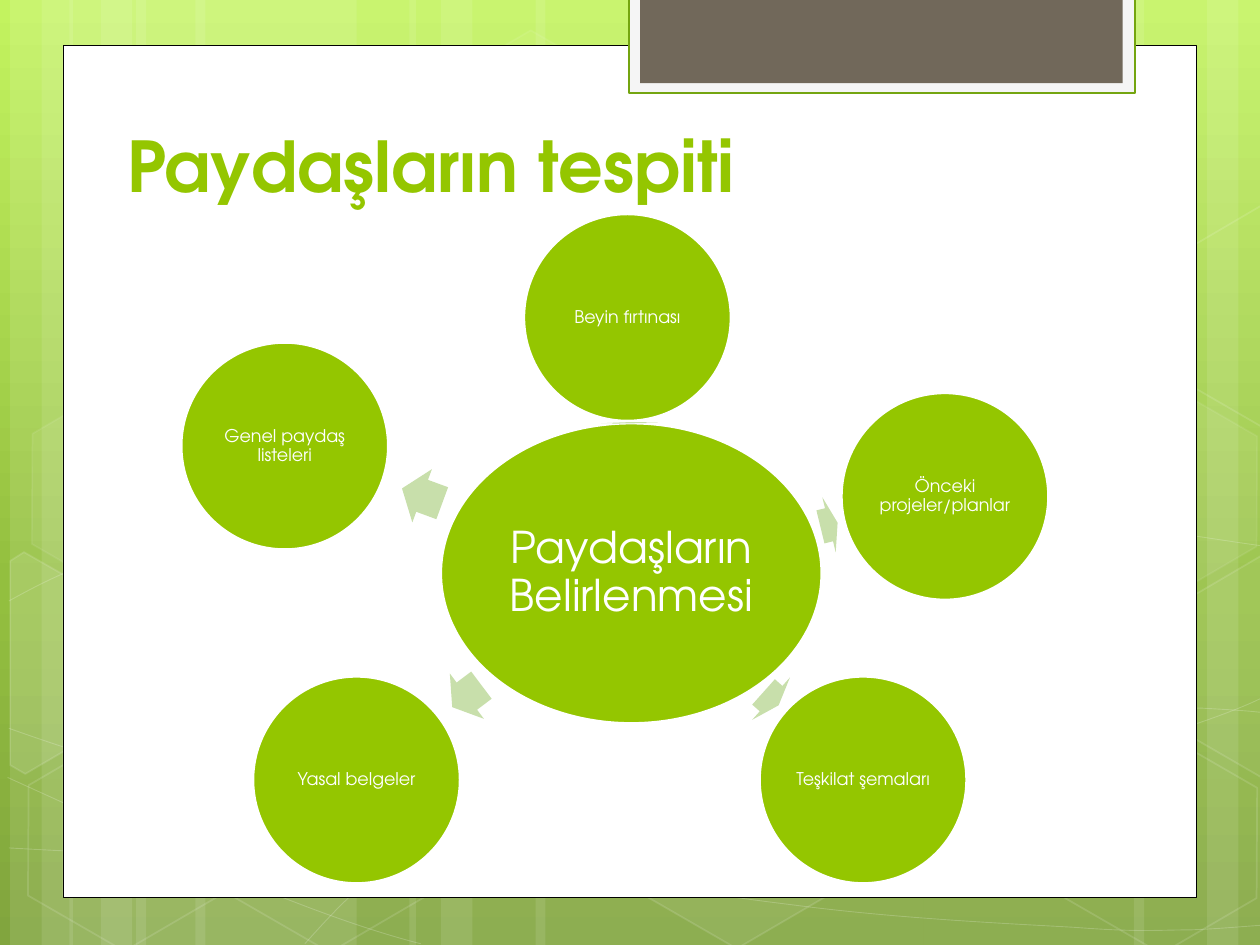
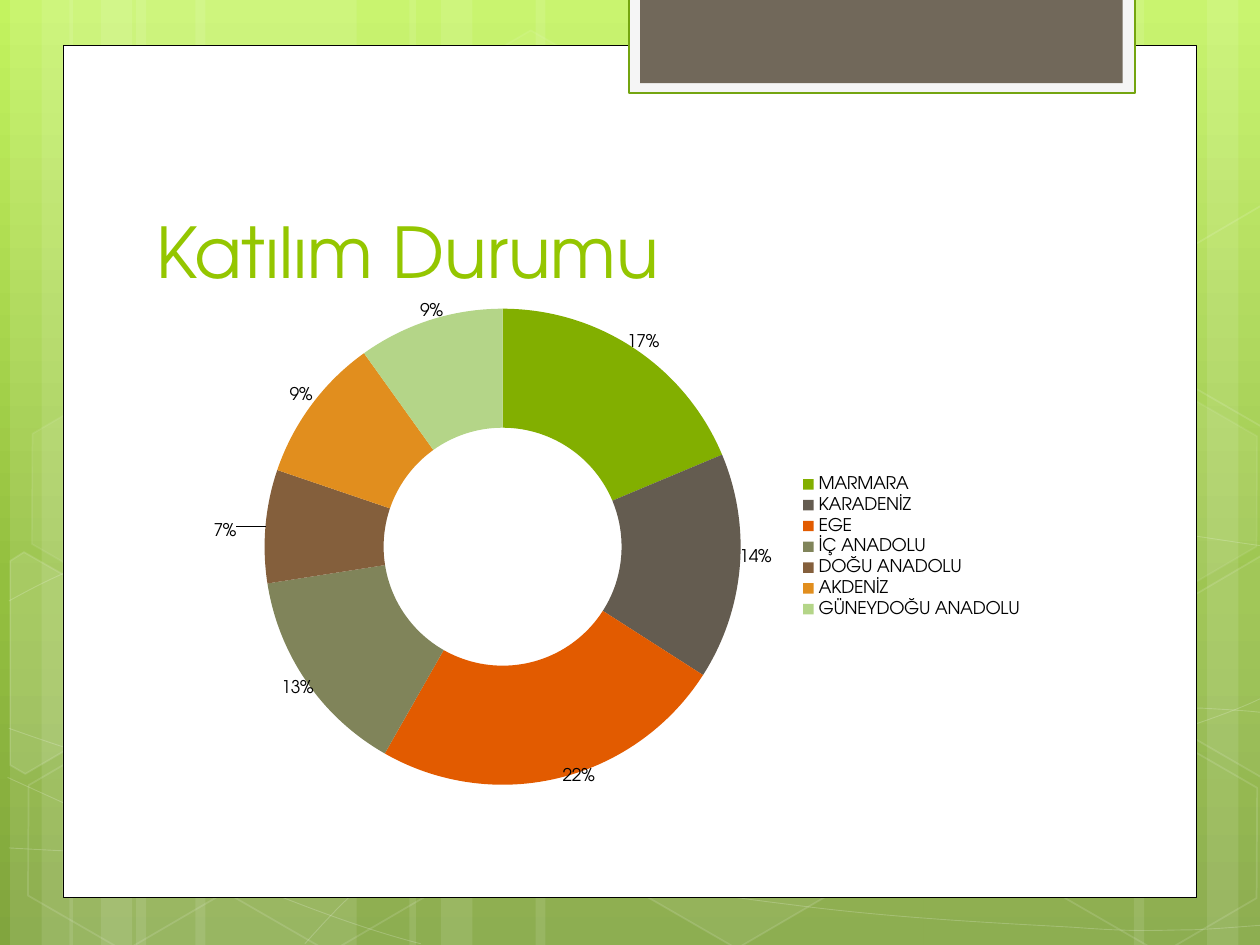
"""Build two slides on stakeholder identification and regional participation."""
import copy
import math
from dataclasses import dataclass
from typing import NamedTuple, Optional

import lxml.etree
import pptx
import pptx.chart.data
import pptx.dml.color
import pptx.enum.chart
import pptx.enum.shapes
import pptx.enum.text
import pptx.oxml
import pptx.oxml.ns
import pptx.util

Inches = pptx.util.Inches
Pt = pptx.util.Pt
qn = pptx.oxml.ns.qn
SHAPE = pptx.enum.shapes.MSO_SHAPE
FONT = "TeX Gyre Adventor"
COLORS = {
    "white": "FFFFFF", "black": "000000", "lime": "94C600", "pale": "C8DFAB",
    "tab": "71685A", "tab_frame": "F5F5F5", "tab_edge": "74A510",
}
BACKGROUND = ((0, "C3F35F"), (62, "93BF3F"), (100, "81A53E"))


class Box(NamedTuple):
    left: float
    top: float
    width: float
    height: float


@dataclass(frozen=True)
class Paint:
    fill: Optional[str] = None
    fill_alpha: int = 100
    line: Optional[str] = None
    line_width: float = 1
    line_alpha: int = 100


@dataclass(frozen=True)
class Hexagon:
    left: float
    top: float
    fill_alpha: int
    line_alpha: int


@dataclass(frozen=True)
class CutHexagon:
    center: tuple
    corners: tuple
    fill_alpha: int


@dataclass(frozen=True)
class Source:
    label: str
    left: float
    top: float
    arrow: Box
    angle: float


@dataclass(frozen=True)
class Region:
    name: str
    share: float
    color: str
    label_dx: float
    label_dy: float


STRIPES = (
    (1.08, 1.75), (0.08, 0.5), (0.33, 0.83), (1.55, 1.75), (0.55, 0.5), (0.8, 0.83),
    (7.33, 1.75), (9.58, 0.5), (9, 0.83), (4.25, 3.08), (3.25, 0.5), (3.5, 0.83),
)
WAVES = (
    ((0.07, 6.73), (0.61, 6.76, 1.15, 6.79, 1.9, 6.78), (2.65, 6.77, 3.58, 6.75, 4.58, 6.65),
     (5.58, 6.55, 7, 6.36, 7.92, 6.17), (8.83, 5.98, 9.77, 5.68, 10.07, 5.51)),
    ((0.07, 4.77), (0.36, 4.61, 0.65, 4.46, 1.21, 4.31), (1.78, 4.16, 2.59, 3.94, 3.47, 3.87),
     (4.36, 3.8, 5.44, 3.79, 6.54, 3.87), (7.64, 3.95, 9.47, 4.26, 10.07, 4.34)),
    ((0.06, 6.17), (1.27, 6.72, 2.47, 7.27, 3.34, 7.49)),
    ((0.07, 5.78), (0.38, 5.89, 0.7, 6, 1.28, 6.16), (1.86, 6.31, 2.73, 6.56, 3.57, 6.73),
     (4.4, 6.9, 5.45, 7.08, 6.28, 7.18), (7.11, 7.29, 8, 7.33, 8.53, 7.36),
     (9.05, 7.4, 9.19, 7.38, 9.45, 7.38), (9.71, 7.37, 9.89, 7.35, 10.07, 7.34)),
    ((2.42, 7.49), (2.6, 7.29, 2.78, 7.09, 3.02, 6.91), (3.26, 6.73, 3.6, 6.53, 3.88, 6.39),
     (4.16, 6.25, 4.33, 6.19, 4.7, 6.09), (5.06, 5.99, 5.73, 5.85, 6.08, 5.78),
     (6.44, 5.71, 6.49, 5.71, 6.8, 5.69), (7.11, 5.66, 7.6, 5.63, 7.94, 5.62),
     (8.29, 5.61, 8.86, 5.62, 8.86, 5.62), (9.53, 5.62),
     (9.71, 5.63, 9.88, 5.64, 9.97, 5.65), (10.06, 5.66, 10.03, 5.65, 10.06, 5.66)),
)
TILT = 30
HEXAGONS = (
    Hexagon(3.34, 0.36, 4, 8), Hexagon(4.97, 5.89, 6, 12), Hexagon(0.11, 5.91, 0, 12),
    Hexagon(0.14, 3.12, 7, 8), Hexagon(1.74, 5.92, 0, 12), Hexagon(7.53, 4.53, 10, 12),
    Hexagon(8.34, 5.93, 0, 12), Hexagon(8.34, 3.14, 7, 8),
)
CUT_HEXAGONS = (
    CutHexagon((0.36, 5.35), ((0.08, 4.45), (0.19, 4.38), (0.96, 4.82), (0.95, 5.7),
                              (0.2, 6.14), (0.08, 6.07)), 10),
    CutHexagon((9.85, 5.2), ((9.26, 4.85), (10.01, 4.41), (10.09, 4.46), (10.09, 6.13),
                             (10.02, 6.17), (9.26, 5.73)), 4),
    CutHexagon((9.85, 2.41), ((9.26, 2.07), (10.01, 1.63), (10.1, 1.68), (10.09, 3.35),
                              (10.02, 3.39), (9.26, 2.95)), 0),
)
SOURCE_SIZE = 1.64
SOURCES = (
    Source("Beyin fırtınası", 4.16, 1.7, Box(4.99, 3.13, 0.01, 0.45), 269),
    Source("Önceki projeler/planlar", 6.68, 3.12, Box(6.51, 3.94, 0.14, 0.45), 346.3),
    Source("Teşkilat şemaları", 6.03, 5.37, Box(6.04, 5.32, 0.16, 0.45), 41.7),
    Source("Yasal belgeler", 2.01, 5.37, Box(3.56, 5.3, 0.29, 0.45), 143.1),
    Source("Genel paydaş listeleri", 1.44, 2.72, Box(3.18, 3.71, 0.34, 0.45), 200.2),
)
REGIONS = (
    Region("MARMARA", 0.17, "82AF00", 0.05, -0.11),
    Region("KARADENİZ", 0.14, "645C50", 0.09, -0.01),
    Region("EGE", 0.22, "E25B00", 0.04, 0.11),
    Region("İÇ ANADOLU", 0.13, "80845A", -0.07, 0.08),
    Region("DOĞU ANADOLU", 0.07, "845F3C", -0.12, 0),
    Region("AKDENİZ", 0.09, "E18E1E", -0.07, -0.09),
    Region("GÜNEYDOĞU ANADOLU", 0.09, "B4D588", -0.02, -0.13),
)


def rgb(value: str) -> pptx.dml.color.RGBColor:
    return pptx.dml.color.RGBColor.from_string(value)


def set_alpha(parent, percent: int) -> None:
    if percent < 100:
        color = parent.find(qn("a:solidFill")).find(qn("a:srgbClr"))
        lxml.etree.SubElement(color, qn("a:alpha"), val=str(percent * 1000))


def apply_paint(shape, paint: Paint) -> None:
    shape.shadow.inherit = False
    properties = shape.element.spPr
    if paint.fill and paint.fill_alpha:
        shape.fill.solid()
        shape.fill.fore_color.rgb = rgb(COLORS[paint.fill])
        set_alpha(properties, paint.fill_alpha)
    else:
        shape.fill.background()
    if paint.line:
        shape.line.color.rgb = rgb(COLORS[paint.line])
        shape.line.width = Pt(paint.line_width)
        set_alpha(properties.find(qn("a:ln")), paint.line_alpha)
    else:
        shape.line.fill.background()


def add_preset(slide, preset, box: Box, paint: Paint, angle: float = 0, adjustments=()):
    shape = slide.shapes.add_shape(preset, *map(Inches, box))
    shape.rotation = angle
    for index, value in enumerate(adjustments):
        shape.adjustments[index] = value
    apply_paint(shape, paint)
    return shape


def add_outline(slide, points, paint: Paint, close: bool = False):
    start, *rest = [(Inches(x), Inches(y)) for x, y in points]
    builder = slide.shapes.build_freeform(*start)
    builder.add_line_segments(rest, close=close)
    shape = builder.convert_to_shape()
    apply_paint(shape, paint)
    return shape


def add_wave(slide, wave) -> None:
    points = [pair for segment in wave for pair in zip(segment[::2], segment[1::2])]
    shape = add_outline(slide, points, Paint(line="white", line_width=0.5, line_alpha=20))
    steps = iter(list(shape.element.iter(qn("a:lnTo"))))
    for segment in wave[1:]:
        first = next(steps)
        if len(segment) == 6:
            first.tag = qn("a:cubicBezTo")
            for _ in range(2):
                step = next(steps)
                first.append(step[0])
                step.getparent().remove(step)


def add_cut_hexagon(slide, cell: CutHexagon) -> None:
    cosine, sine = math.cos(math.radians(TILT)), math.sin(math.radians(TILT))
    center_x, center_y = cell.center
    upright = [(center_x + (x - center_x) * cosine + (y - center_y) * sine,
                center_y - (x - center_x) * sine + (y - center_y) * cosine) for x, y in cell.corners]
    shape = add_outline(slide, upright, Paint("white", cell.fill_alpha, "white", 1, 12), close=True)
    shape.rotation = TILT


def style_text(frame, text: str, size: float, color: str, bold: bool = False):
    frame.word_wrap = True
    paragraph = frame.paragraphs[0]
    paragraph.text = text
    font = paragraph.font
    font.name, font.size, font.bold = FONT, Pt(size), bold
    font.color.rgb = rgb(COLORS[color])
    return paragraph


def set_background(master) -> None:
    fill = master.background.fill
    fill.gradient()
    fill.gradient_angle = 270
    first_stop = next(master.element.iter(qn("a:gs")))
    first_stop.addnext(copy.deepcopy(first_stop))
    for stop, (position, color) in zip(fill.gradient_stops, BACKGROUND):
        stop.position = position / 100
        stop.color.rgb = rgb(color)


def add_framed_slide(deck, title: str, title_box: Box, bold: bool = False):
    slide = deck.slides.add_slide(deck.slide_layouts[6])
    for left, width in STRIPES:
        add_preset(slide, SHAPE.RECTANGLE, Box(left, 0, width, 7.5), Paint("white", 10))
    for wave in WAVES:
        add_wave(slide, wave)
    for cell in HEXAGONS:
        add_preset(slide, SHAPE.HEXAGON, Box(cell.left, cell.top, 1.75, 1.52),
                   Paint("white", cell.fill_alpha, "white", 1, cell.line_alpha), TILT, (0.285, 1.155))
    for cell in CUT_HEXAGONS:
        add_cut_hexagon(slide, cell)
    add_preset(slide, SHAPE.RECTANGLE, Box(0.5, 0.36, 9, 6.76), Paint("white", line="black", line_width=0.5))
    add_preset(slide, SHAPE.RECTANGLE, Box(4.99, -0.02, 4.02, 0.76),
               Paint("tab_frame", line="tab_edge", line_width=1.25))
    add_preset(slide, SHAPE.RECTANGLE, Box(5.08, -0.02, 3.83, 0.68), Paint("tab"))
    heading = slide.shapes.add_textbox(*map(Inches, title_box)).text_frame
    heading.vertical_anchor = pptx.enum.text.MSO_ANCHOR.BOTTOM
    style_text(heading, title, 40, "lime", bold)
    return slide


def add_bubble(slide, box: Box, text: str, size: float, margin: float) -> None:
    bubble = add_preset(slide, SHAPE.OVAL, box, Paint("lime", line="white", line_width=1.25))
    frame = bubble.text_frame
    frame.margin_left = frame.margin_right = Inches(margin)
    frame.margin_top = frame.margin_bottom = Inches(margin)
    frame.vertical_anchor = pptx.enum.text.MSO_ANCHOR.MIDDLE
    paragraph = style_text(frame, text, size, "white")
    paragraph.alignment = pptx.enum.text.PP_ALIGN.CENTER
    paragraph.line_spacing = 0.9


def add_stakeholder_map(slide) -> None:
    add_bubble(slide, Box(3.5, 3.36, 3.02, 2.38), "Paydaşların Belirlenmesi", 25, 0.03)
    for source in SOURCES:
        add_preset(slide, SHAPE.RIGHT_ARROW, source.arrow, Paint("pale"), source.angle, (0.6, 0.5))
        add_bubble(slide, Box(source.left, source.top, SOURCE_SIZE, SOURCE_SIZE), source.label, 10, 0.01)


def manual_layout(**settings):
    entries = "".join(f'<c:{tag} val="{value}"/>' for tag, value in settings.items())
    return pptx.oxml.parse_xml(
        f'<c:layout {pptx.oxml.ns.nsdecls("c")}><c:manualLayout>{entries}</c:manualLayout></c:layout>')


def add_participation_chart(slide) -> None:
    data = pptx.chart.data.CategoryChartData(number_format="0%")
    data.categories = [region.name for region in REGIONS]
    data.add_series("Series 1", [region.share for region in REGIONS])
    chart = slide.shapes.add_chart(pptx.enum.chart.XL_CHART_TYPE.DOUGHNUT,
                                   *map(Inches, Box(1.61, 2.33, 6.61, 4.02)), data).chart
    chart.has_title = False
    chart.font.name, chart.font.size = FONT, Pt(10)
    chart.font.color.rgb = rgb(COLORS["black"])
    chart.has_legend = True
    chart.legend.position = pptx.enum.chart.XL_LEGEND_POSITION.RIGHT
    chart.legend.include_in_layout = False
    plot = chart.plots[0]
    plot.vary_by_categories = True
    series = plot.series[0]
    labels = series.data_labels
    labels.show_value = True
    labels.number_format, labels.number_format_is_linked = "0%", False
    for index, region in enumerate(REGIONS):
        point = series.points[index]
        point.format.fill.solid()
        point.format.fill.fore_color.rgb = rgb(region.color)
        point.format.line.fill.background()
        point.data_label.font.size = Pt(10)
    for label, region in zip(chart.element.iter(qn("c:dLbl")), REGIONS):
        label.find(qn("c:idx")).addnext(manual_layout(x=region.label_dx, y=region.label_dy))
    plot_area = next(chart.element.iter(qn("c:plotArea")))
    for layout in plot_area.findall(qn("c:layout")):
        plot_area.remove(layout)
    plot_area.insert(0, manual_layout(layoutTarget="inner", xMode="edge", yMode="edge",
                                      x=0.07, y=0.03, w=0.58, h=0.94))


def main() -> None:
    deck = pptx.Presentation()
    deck.slide_width, deck.slide_height = Inches(10), Inches(7.5)
    set_background(deck.slide_master)
    add_stakeholder_map(add_framed_slide(deck, "Paydaşların tespiti", Box(0.91, 0.44, 7.68, 1.25), True))
    add_participation_chart(add_framed_slide(deck, "Katılım Durumu", Box(1.14, 1.12, 7.68, 1.25)))
    deck.save("out.pptx")


if __name__ == "__main__":
    main()
